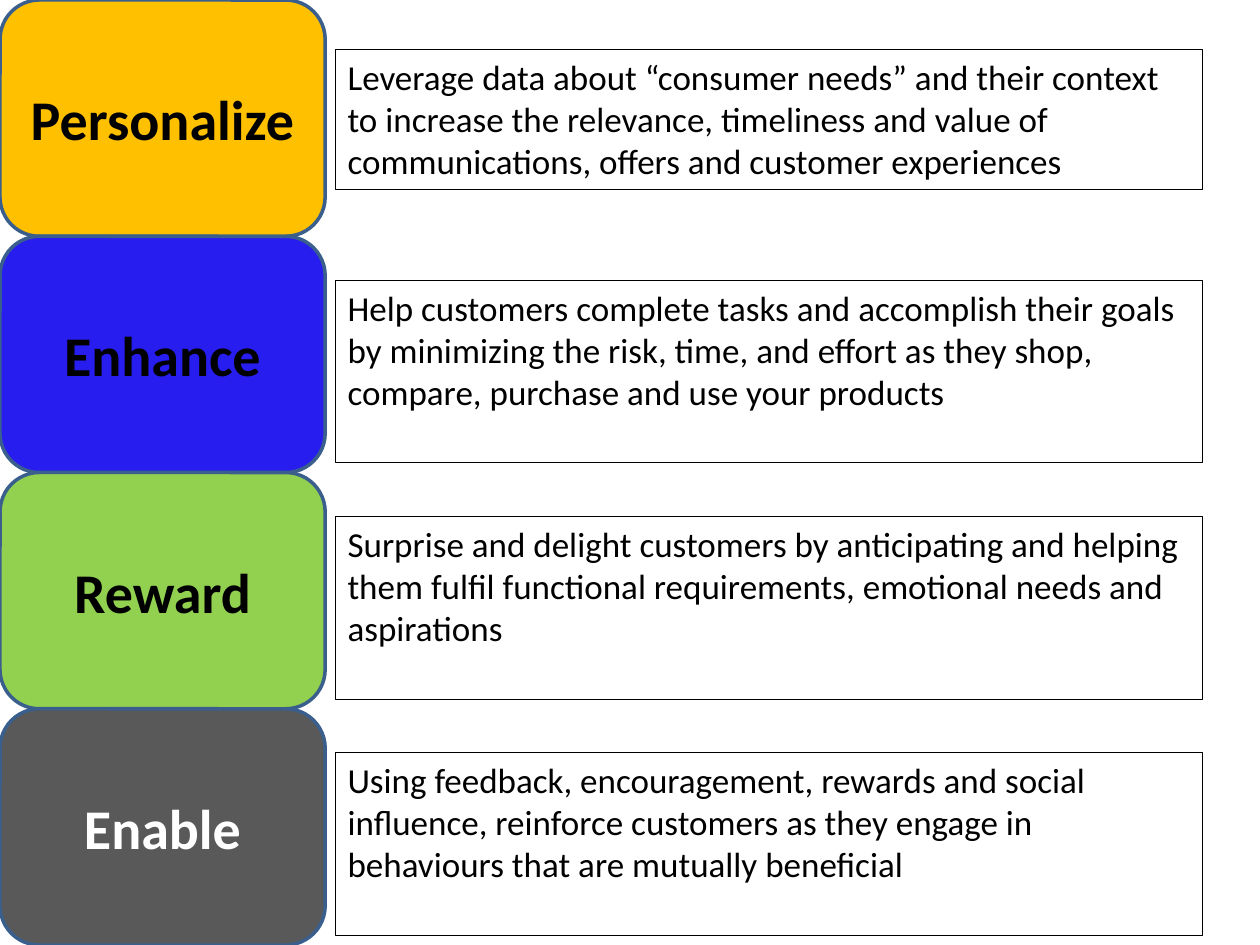
from pptx import Presentation
from pptx.dml.color import RGBColor
from pptx.enum.shapes import MSO_SHAPE as Preset
from pptx.enum.text import MSO_ANCHOR as Anchor, PP_ALIGN as Align
from pptx.util import Pt

SLIDE_WIDTH, SLIDE_HEIGHT = 720, 540
LABEL_WIDTH = 185.8
DETAIL_LEFT, DETAIL_WIDTH = 191.5, 495.4

# Label, fill, label colour, description, description offset in its row and height
PRINCIPLES = [
    ("Personalize", "FFC000", "000000",
     "Leverage data about “consumer needs” and their context to increase the "
     "relevance, timeliness and value of communications, offers and customer "
     "experiences", 28, 80),
    ("Enhance", "271DEF", "000000",
     "Help customers complete tasks and accomplish their goals by minimizing "
     "the risk, time, and effort as they shop, compare, purchase and use your "
     "products", 25, 104.4),
    ("Reward", "92D050", "000000",
     "Surprise and delight customers by anticipating and helping them fulfil "
     "functional requirements, emotional needs and aspirations", 25, 104.4),
    ("Enable", "595959", "FFFFFF",
     "Using feedback, encouragement, rewards and social influence, reinforce "
     "customers as they engage in behaviours that are mutually beneficial",
     25, 104.4),
]


def color(hex_code):
    return RGBColor.from_string(hex_code)


def style_outline(shape, hex_code, width):
    shape.line.color.rgb = color(hex_code)
    shape.line.width = Pt(width)


def write(shape, wording, size, hex_code, bold=False):
    frame = shape.text_frame
    frame.word_wrap = True
    frame.text = wording
    font = frame.paragraphs[0].runs[0].font
    font.name, font.size, font.bold = "Calibri", Pt(size), bold
    font.color.rgb = color(hex_code)


def add_label(slide, box, name, fill, text_color):
    label = slide.shapes.add_shape(Preset.ROUNDED_RECTANGLE, *map(Pt, box))
    label.shadow.inherit = False
    label.fill.solid()
    label.fill.fore_color.rgb = color(fill)
    style_outline(label, "3A5F8C", 2)
    write(label, name, 32, text_color, bold=True)
    label.text_frame.vertical_anchor = Anchor.MIDDLE
    label.text_frame.paragraphs[0].alignment = Align.CENTER


def add_description(slide, box, wording):
    description = slide.shapes.add_textbox(*map(Pt, box))
    style_outline(description, "000000", 0.25)
    write(description, wording, 20, "000000")


def add_principles(slide, box):
    left, top, _, height = box
    row_height = height / len(PRINCIPLES)
    # Labels stacked down the left edge
    for row, (name, fill, text_color, *_) in enumerate(PRINCIPLES):
        label_box = (left, top + row * row_height, LABEL_WIDTH, row_height)
        add_label(slide, label_box, name, fill, text_color)
    # Outlined descriptions beside them
    for row, (*_, wording, offset, detail_height) in enumerate(PRINCIPLES):
        detail_top = top + row * row_height + offset
        detail_box = (left + DETAIL_LEFT, detail_top, DETAIL_WIDTH, detail_height)
        add_description(slide, detail_box, wording)


def main():
    deck = Presentation()
    deck.slide_width, deck.slide_height = Pt(SLIDE_WIDTH), Pt(SLIDE_HEIGHT)
    slide = deck.slides.add_slide(deck.slide_layouts[6])
    add_principles(slide, (0, 0, SLIDE_WIDTH, SLIDE_HEIGHT))
    deck.save("out.pptx")


if __name__ == "__main__":
    main()
